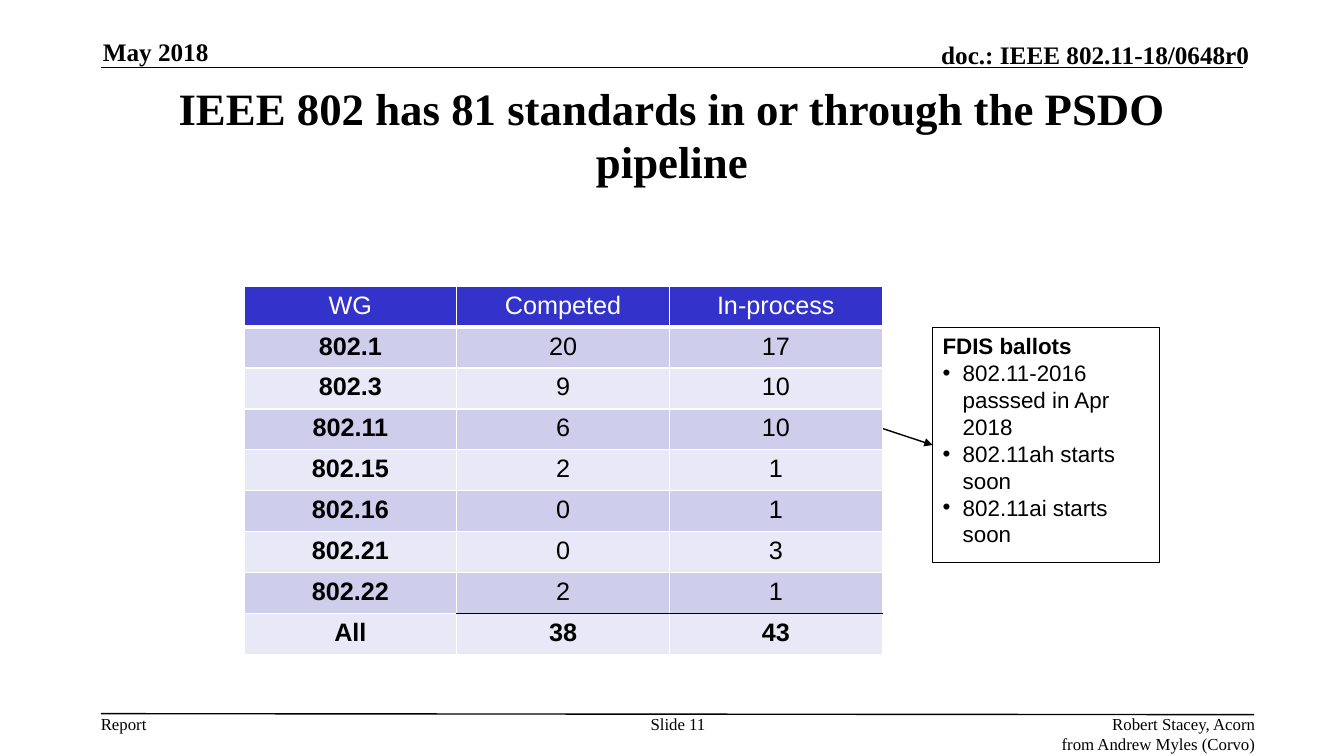
from lxml import etree
from pptx import Presentation
from pptx.dml.color import RGBColor
from pptx.enum.shapes import MSO_CONNECTOR as Connector, MSO_SHAPE as Shape
from pptx.enum.text import MSO_ANCHOR as Anchor, PP_ALIGN as Align
from pptx.oxml.ns import qn
from pptx.util import Inches, Pt

BLACK, WHITE = "000000", "FFFFFF"
HEADER_FILL, BANDS = "3333CC", ("CECEEC", "E8E8F6")
SERIF, SANS = "Times New Roman", "Arial"

STANDARDS = [
    ("WG", "Competed", "In-process"),
    ("802.1", 20, 17),
    ("802.3", 9, 10),
    ("802.11", 6, 10),
    ("802.15", 2, 1),
    ("802.16", 0, 1),
    ("802.21", 0, 3),
    ("802.22", 2, 1),
    ("All", 38, 43),
]
BALLOTS = ["FDIS ballots", "802.11-2016 passsed in Apr 2018",
           "802.11ah starts soon", "802.11ai starts soon"]


def color(value):
    return RGBColor.from_string(value)


def format_para(para, size, font, bold=False, align=Align.LEFT, ink=BLACK):
    para.alignment = align
    for span in para.runs:
        span.font.size = Pt(size)
        span.font.name = font
        span.font.bold = bold
        span.font.color.rgb = color(ink)


def add_label(slide, box, text, size, bold=False, align=Align.LEFT, anchor=Anchor.TOP):
    label = slide.shapes.add_textbox(*map(Inches, box))
    frame = label.text_frame
    frame.word_wrap = True
    frame.vertical_anchor = anchor
    frame.margin_left = frame.margin_right = frame.margin_top = frame.margin_bottom = 0
    frame.text = text
    for para in frame.paragraphs:
        format_para(para, size, SERIF, bold, align)


def add_line(slide, start, end):
    line = slide.shapes.add_connector(Connector.STRAIGHT, *map(Inches, (*start, *end)))
    line.line.color.rgb = color(BLACK)
    line.line.width = Pt(1)
    etree.SubElement(line._element.spPr, qn("a:effectLst"))
    return line


def add_header(slide, left, rule_top):
    add_line(slide, (left, rule_top), (left + 11.33, rule_top))
    add_label(slide, (left + 0.02, rule_top - 0.31, 2.73, 0.3), "May 2018",
              18, True, anchor=Anchor.BOTTOM)
    add_label(slide, (left + 6.29, rule_top - 0.28, 5.1, 0.3),
              "doc.: IEEE 802.11-18/0648r0", 18, True, Align.RIGHT, Anchor.BOTTOM)


def add_footer(slide, left, top):
    add_line(slide, (left, top), (left + 11.44, top + 0.01))
    add_label(slide, (left, top, 1, 0.2), "Report", 12)
    add_label(slide, (left + 5.34, top, 0.77, 0.4), "Slide 11", 12, align=Align.CENTER)
    add_label(slide, (left + 6.81, top, 4.64, 0.2),
              "Robert Stacey, Acorn\nfrom Andrew Myles (Corvo)", 12, align=Align.RIGHT)


def set_title(slide, box, text):
    title = slide.shapes.title
    title.left, title.top, title.width, title.height = map(Inches, box)
    frame = title.text_frame
    frame.text = text
    frame.word_wrap = True
    frame.vertical_anchor = Anchor.MIDDLE
    format_para(frame.paragraphs[0], 32, SERIF, True, Align.CENTER)


def set_borders(cell, **widths_and_colors):
    properties = cell._tc.get_or_add_tcPr()
    for side in "LRTB":
        width, ink = widths_and_colors.get(side, (1, WHITE))
        border = etree.SubElement(properties, qn(f"a:ln{side}"), w=str(Pt(width)))
        fill = etree.SubElement(border, qn("a:solidFill"))
        etree.SubElement(fill, qn("a:srgbClr"), val=ink)


def add_standards_table(slide, box):
    last = len(STANDARDS) - 1
    table = slide.shapes.add_table(len(STANDARDS), 3, *map(Inches, box)).table
    for r, values in enumerate(STANDARDS):
        for c, value in enumerate(values):
            cell = table.cell(r, c)
            borders = {}
            if r == 0:
                borders["B"] = (3, WHITE)
            elif r == 1:
                borders["T"] = (3, WHITE)
            # Black rule above the totals
            if c and r >= last - 1:
                borders["T" if r == last else "B"] = (1, BLACK)
            set_borders(cell, **borders)
            cell.fill.solid()
            cell.fill.fore_color.rgb = color(BANDS[(r - 1) % 2] if r else HEADER_FILL)
            cell.text_frame.text = str(value)
            format_para(cell.text_frame.paragraphs[0], 18, SANS,
                        bold=r > 0 and (c == 0 or r == last),
                        align=Align.CENTER, ink=BLACK if r else WHITE)


def add_ballot_note(slide, box, arrow_start):
    left, top, width, height = box
    note = slide.shapes.add_shape(Shape.RECTANGLE, *map(Inches, box))
    note.shadow.inherit = False
    note.fill.solid()
    note.fill.fore_color.rgb = color(WHITE)
    note.line.color.rgb = color(BLACK)
    note.line.width = Pt(1)
    frame = note.text_frame
    frame.word_wrap = True
    frame.vertical_anchor = Anchor.TOP
    frame.text = "\n".join(BALLOTS)
    for i, para in enumerate(frame.paragraphs):
        format_para(para, 16, SANS, bold=i == 0)
        if i:
            properties = para._p.get_or_add_pPr()
            properties.set("marL", str(Inches(0.2)))
            properties.set("indent", str(-Inches(0.2)))
            etree.SubElement(properties, qn("a:buFont"), typeface=SANS)
            etree.SubElement(properties, qn("a:buChar"), char="•")

    # Arrow from the 802.11 row
    arrow = add_line(slide, arrow_start, (left, top + height / 2))
    arrow.end_connect(note, 1)
    etree.SubElement(arrow.line._get_or_add_ln(), qn("a:tailEnd"), type="triangle")


def main():
    deck = Presentation()
    deck.slide_width, deck.slide_height = Inches(13.33), Inches(7.5)
    slide = deck.slides.add_slide(deck.slide_layouts[5])
    add_header(slide, 1, 0.67)
    set_title(slide, (1, 0.75, 11.33, 1.16),
              "IEEE 802 has 81 standards in or through the PSDO pipeline")
    add_ballot_note(slide, (9.25, 3.25, 2.25, 2.33), (8.75, 4.25))
    add_standards_table(slide, (2.42, 2.84, 6.33, 3.65))
    add_footer(slide, 1, 7.08)
    deck.save("out.pptx")


if __name__ == "__main__":
    main()
